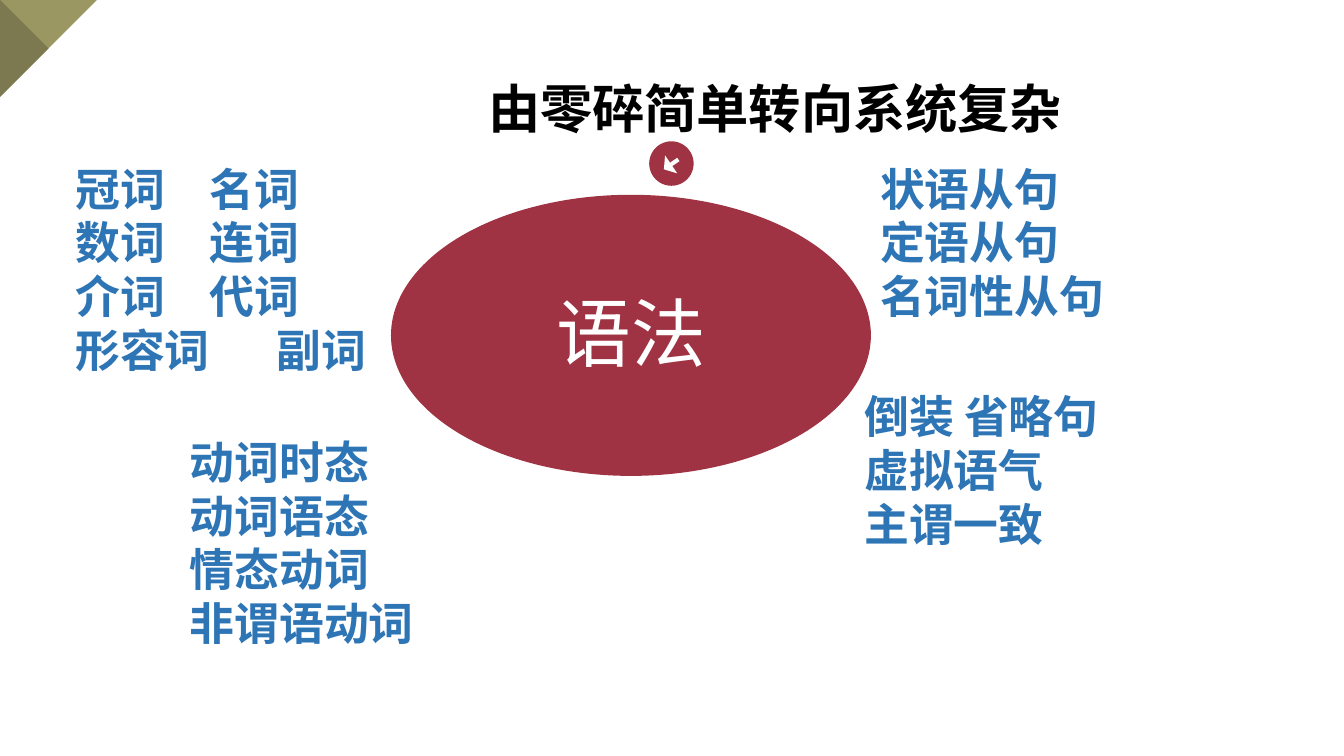
from pptx import Presentation
from pptx import util as u
from pptx.dml.color import RGBColor
from pptx.enum import shapes, text
from pptx.oxml.ns import qn
from lxml import etree

FONT = "Noto Sans CJK SC"
RED = RGBColor(0x9F, 0x33, 0x43)
BLUE = RGBColor(0x2E, 0x75, 0xB6)
OLIVE = RGBColor(0x9B, 0x97, 0x63)
DARK_OLIVE = RGBColor(0x7C, 0x79, 0x50)
WHITE = RGBColor(0xFF, 0xFF, 0xFF)
BLACK = RGBColor(0, 0, 0)


def write(box, place, lines, size, color, bold=True,
          align=text.PP_ALIGN.LEFT, tabs=()):
    """Place a text holder and fill it with plain, unbulleted lines."""
    box.left, box.top, box.width, box.height = [u.Cm(n) for n in place]
    frame = box.text_frame
    frame.text = "\n".join(lines)
    frame.word_wrap = True
    frame.auto_size = text.MSO_AUTO_SIZE.NONE
    frame.vertical_anchor = text.MSO_ANCHOR.TOP
    for number, para in enumerate(frame.paragraphs):
        props = para._p.get_or_add_pPr()
        props.set("marL", "0")
        props.set("indent", "0")
        etree.SubElement(props, qn("a:buNone"))
        if tabs:
            stops = etree.SubElement(props, qn("a:tabLst"))
            etree.SubElement(stops, qn("a:tab"),
                             pos=str(u.Cm(tabs[number])), algn="l")
        para.alignment = align
        para.space_before = para.space_after = u.Pt(0)
        para.line_spacing = u.Pt(size * 1.2)
        for span in para.runs:
            span.font.size = u.Pt(size)
            span.font.bold = bold
            span.font.color.rgb = color
            span.font.name = FONT
            etree.SubElement(span.font._element, qn("a:ea"), typeface=FONT)


def paint(shape, color):
    shape.shadow.inherit = False
    shape.fill.solid()
    shape.fill.fore_color.rgb = color
    shape.line.fill.background()


deck = Presentation()
deck.slide_width, deck.slide_height = u.Cm(25.4), u.Cm(14.28)
page = deck.slides.add_slide(deck.slide_layouts.get_by_name("Comparison"))

# Folded corner
corner = 1.83
fold = page.shapes.add_shape(shapes.MSO_SHAPE.RIGHT_TRIANGLE, 0, 0,
                             u.Cm(corner), u.Cm(corner))
fold.rotation = 90
paint(fold, OLIVE)
outline = page.shapes.build_freeform(0, 0)
outline.add_line_segments([(u.Cm(corner / 2), u.Cm(corner / 2)),
                           (0, u.Cm(corner))])
paint(outline.convert_to_shape(), DARK_OLIVE)

# Central topic
topic = page.shapes.add_shape(shapes.MSO_SHAPE.OVAL, u.Cm(7.39), u.Cm(3.68),
                              u.Cm(9.07), u.Cm(5.31))
paint(topic, RED)
label = page.shapes.add_textbox(0, 0, 0, 0)
write(label, (8.97, 5.29, 5.92, 1.96), ["语法"], 40, WHITE, bold=False,
      align=text.PP_ALIGN.CENTER)

# Title
write(page.shapes.title, (8.97, 1.32, 13.16, 1.45),
      ["由零碎简单转向系统复杂"], 28, BLACK)

# Grammar lists around the topic: place, lines, tab stop of each line
groups = [
    ((1.17, 2.92, 7.09, 6.4),
     ["冠词\t名词", "数词\t连词", "介词\t代词", "形容词\t副词"],
     (3.83, 2.66, 2.69, 3.13)),
    ((3.33, 8.08, 6.43, 4.37),
     ["动词时态", "动词语态", "情态动词", "非谓语动词"], ()),
    ((16.38, 2.92, 8, 3.33),
     ["状语从句", "定语从句", "名词性从句"], ()),
    ((16.08, 7.22, 8, 7.06),
     ["倒装 省略句", "虚拟语气", "主谓一致"], ()),
]
bodies = list(page.placeholders)[1:]
for body, (place, lines, tabs) in zip(bodies, groups):
    write(body, place, lines, 24, BLUE, tabs=tabs)

# Arrow badge
badge = page.shapes.add_shape(shapes.MSO_SHAPE.OVAL, u.Cm(12.27), u.Cm(2.67),
                              u.Cm(0.84), u.Cm(0.84))
paint(badge, RED)
arrow = page.shapes.add_shape(shapes.MSO_SHAPE.LEFT_ARROW, u.Cm(12.52),
                              u.Cm(2.9), u.Cm(0.33), u.Cm(0.41))
arrow.adjustments[0] = 0.19
arrow.adjustments[1] = 0.5
arrow.rotation = 325.9
paint(arrow, WHITE)

deck.save("out.pptx")
